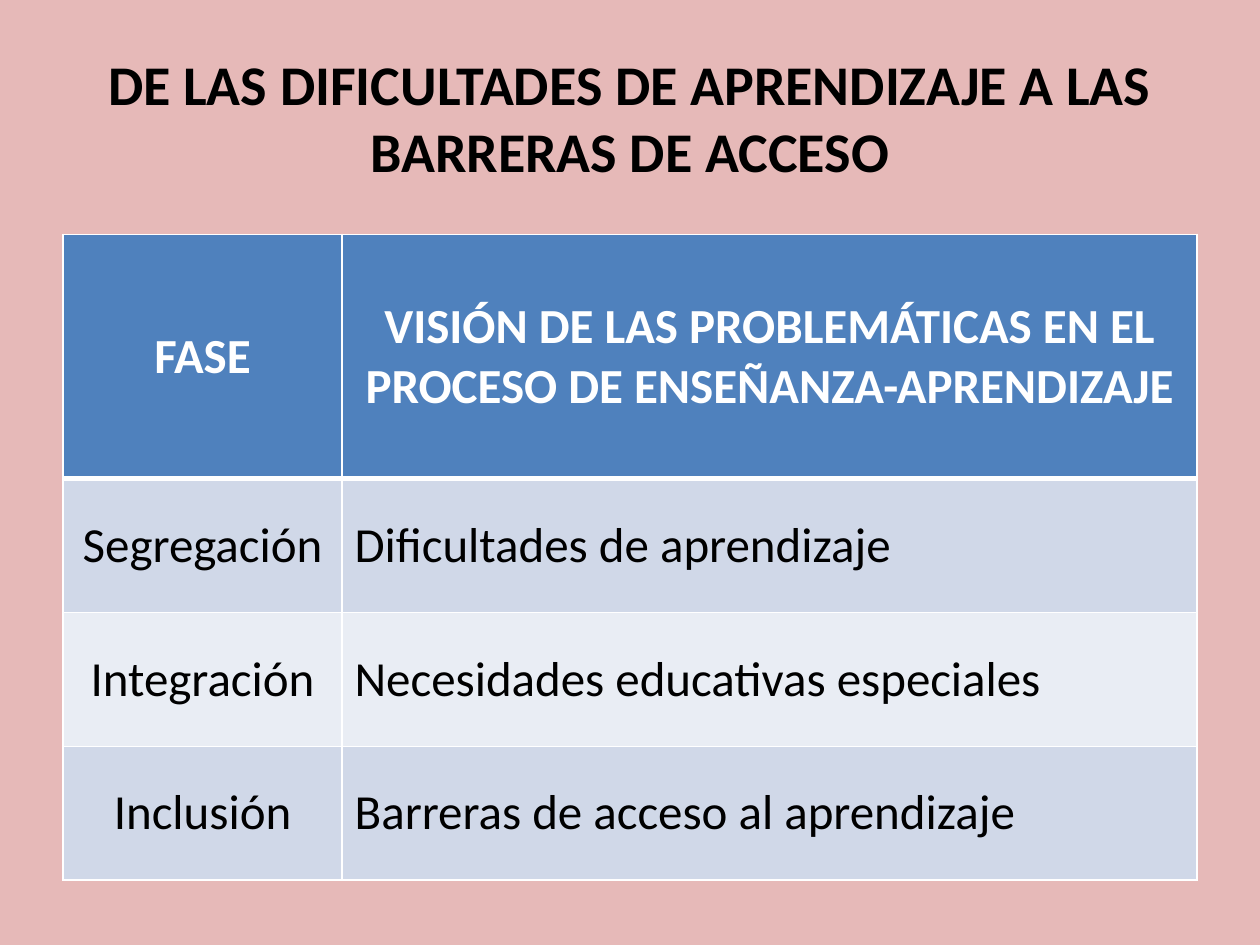
from lxml.etree import SubElement
from pptx import Presentation
from pptx.dml.color import RGBColor
from pptx.enum.text import MSO_ANCHOR, PP_ALIGN
from pptx.oxml.ns import qn
from pptx.util import Pt

COLORS = {
    "background": "E6B9B8",
    "header": "4F81BD",
    "odd_row": "D0D8E8",
    "even_row": "E9EDF4",
    "border": "FFFFFF",
    "header_text": "FFFFFF",
    "text": "000000",
}
TITLE = "DE LAS DIFICULTADES DE APRENDIZAJE A LAS BARRERAS DE ACCESO"
PHASES = [
    ("FASE", "VISIÓN DE LAS PROBLEMÁTICAS EN EL PROCESO DE ENSEÑANZA-APRENDIZAJE"),
    ("Segregación", "Dificultades de aprendizaje"),
    ("Integración", "Necesidades educativas especiales"),
    ("Inclusión", "Barreras de acceso al aprendizaje"),
]
COLUMN_WIDTHS = [159.5, 488.5]
ROW_HEIGHTS = [139.5, 76.5, 76.5, 76.5]


def color(name):
    return RGBColor.from_string(COLORS[name])


def write(frame, text, size, color_name, bold, align):
    frame.text = text
    paragraph = frame.paragraphs[0]
    paragraph.alignment = align
    font = paragraph.runs[0].font
    font.name = "Calibri"
    font.size = Pt(size)
    font.bold = bold
    font.color.rgb = color(color_name)


def add_title(slide):
    title = slide.shapes.add_textbox(Pt(36), Pt(21.6), Pt(648), Pt(90))
    title.text_frame.word_wrap = True
    title.text_frame.vertical_anchor = MSO_ANCHOR.MIDDLE
    write(title.text_frame, TITLE, 32, "text", True, PP_ALIGN.CENTER)


def set_borders(cell, top, bottom):
    properties = cell._tc.get_or_add_tcPr()
    for side, width in (("lnL", 1), ("lnR", 1), ("lnT", top), ("lnB", bottom)):
        line = SubElement(properties, qn(f"a:{side}"), w=str(Pt(width)))
        fill = SubElement(line, qn("a:solidFill"))
        SubElement(fill, qn("a:srgbClr"), val=COLORS["border"])


def fill_cell(cell, text, row, column):
    header = row == 0
    set_borders(cell, 3 if row == 1 else 1, 3 if header else 1)
    fill_name = "header" if header else "odd_row" if row % 2 else "even_row"
    cell.fill.solid()
    cell.fill.fore_color.rgb = color(fill_name)
    cell.vertical_anchor = MSO_ANCHOR.MIDDLE
    align = PP_ALIGN.CENTER if header or column == 0 else PP_ALIGN.LEFT
    text_color = "header_text" if header else "text"
    write(cell.text_frame, text, 28, text_color, header, align)


def add_phase_table(slide):
    phase_table = slide.shapes.add_table(
        len(PHASES), len(COLUMN_WIDTHS), Pt(36), Pt(134),
        Pt(sum(COLUMN_WIDTHS)), Pt(sum(ROW_HEIGHTS)),
    ).table
    for column, width in zip(phase_table.columns, COLUMN_WIDTHS):
        column.width = Pt(width)
    for row, height in zip(phase_table.rows, ROW_HEIGHTS):
        row.height = Pt(height)
    for row, phase in enumerate(PHASES):
        for column, text in enumerate(phase):
            fill_cell(phase_table.cell(row, column), text, row, column)


def main():
    presentation = Presentation()
    presentation.slide_width = Pt(720)
    presentation.slide_height = Pt(540)
    slide = presentation.slides.add_slide(presentation.slide_layouts[6])
    slide.background.fill.solid()
    slide.background.fill.fore_color.rgb = color("background")
    add_title(slide)
    add_phase_table(slide)
    presentation.save("out.pptx")


if __name__ == "__main__":
    main()
